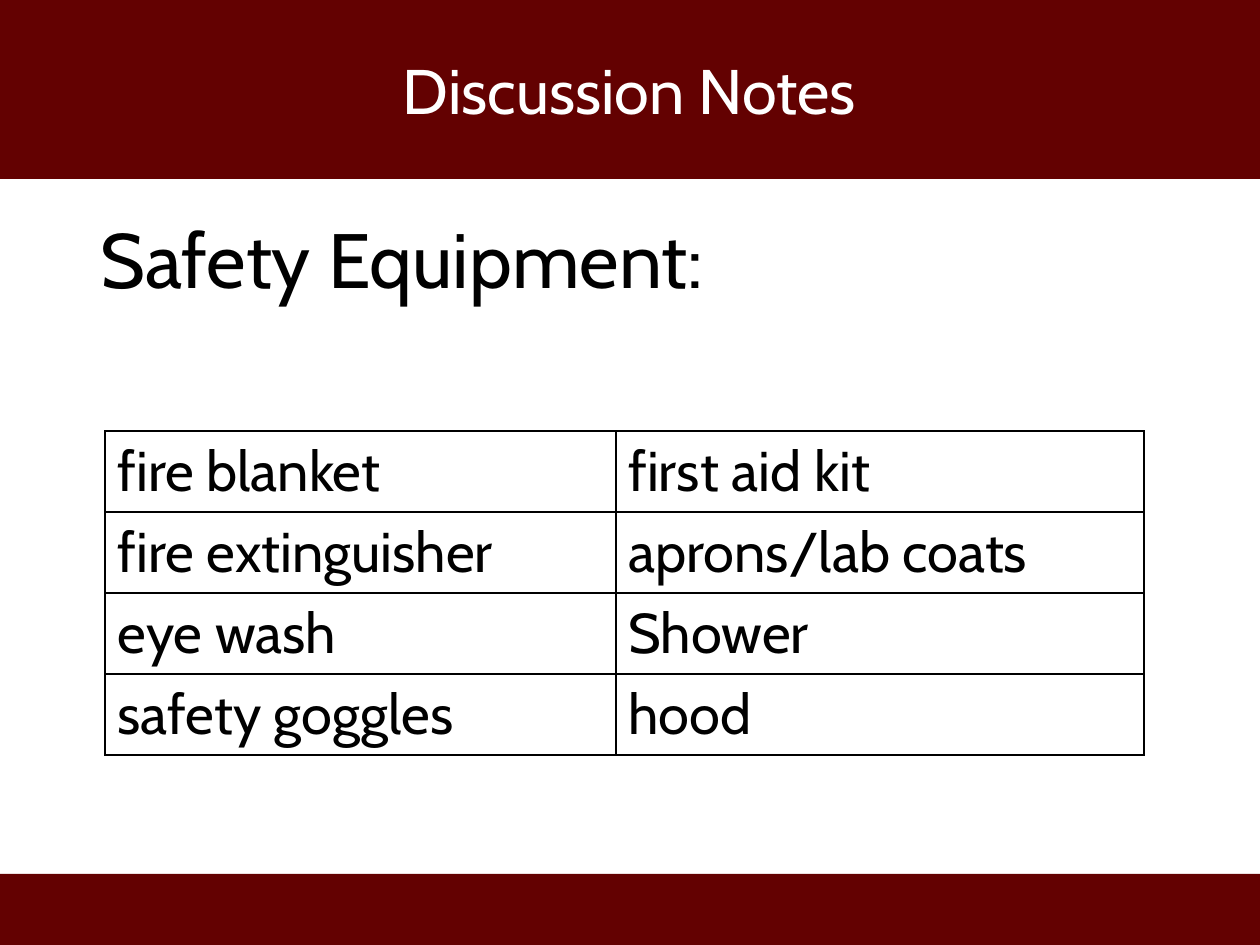
from lxml import etree
from pptx import Presentation
from pptx.dml.color import RGBColor
from pptx.enum.shapes import MSO_SHAPE
from pptx.enum.text import MSO_ANCHOR, PP_ALIGN
from pptx.oxml.ns import qn
from pptx.util import Emu, Pt

PX = 914400 // 126
WIDTH, HEIGHT = 1260, 945
FONT = "Cabin"
COLORS = {"band": "630101", "title": "FFFFFF", "text": "000000", "border": "000000"}
RECTANGLE = MSO_SHAPE.RECTANGLE
TOP, MIDDLE = MSO_ANCHOR.TOP, MSO_ANCHOR.MIDDLE
LEFT, CENTER = PP_ALIGN.LEFT, PP_ALIGN.CENTER

EQUIPMENT = [
    ("fire blanket", "first aid kit"),
    ("fire extinguisher", "aprons/lab coats"),
    ("eye wash", "Shower"),
    ("safety goggles", "hood"),
]
COLUMN_WIDTHS = (511, 528)
ROW_HEIGHT = 81


def px(*lengths):
    return [Emu(length * PX) for length in lengths]


def rgb(name):
    return RGBColor.from_string(COLORS[name])


def write(frame, text, size, color, align=LEFT):
    paragraph = frame.paragraphs[0]
    paragraph.text = text
    paragraph.alignment = align
    paragraph.font.name = FONT
    paragraph.font.size = Pt(size)
    paragraph.font.color.rgb = rgb(color)


def add_band(slide, top, height):
    band = slide.shapes.add_shape(RECTANGLE, *px(0, top, WIDTH, height))
    band.shadow.inherit = False
    band.fill.solid()
    band.fill.fore_color.rgb = rgb("band")
    band.line.fill.background()


def add_text(slide, box, text, size, color, align=LEFT, anchor=TOP):
    frame = slide.shapes.add_textbox(*px(*box)).text_frame
    frame.word_wrap = True
    frame.vertical_anchor = anchor
    write(frame, text, size, color, align)


def add_borders(cell):
    properties = cell._tc.get_or_add_tcPr()
    for index, side in enumerate(("a:lnL", "a:lnR", "a:lnT", "a:lnB")):
        line = etree.Element(qn(side), w=str(Pt(1)))
        fill = etree.SubElement(line, qn("a:solidFill"))
        etree.SubElement(fill, qn("a:srgbClr"), val=COLORS["border"])
        properties.insert(index, line)


def add_equipment_table(slide, left, top):
    box = px(left, top, sum(COLUMN_WIDTHS), ROW_HEIGHT * len(EQUIPMENT))
    table = slide.shapes.add_table(len(EQUIPMENT), len(COLUMN_WIDTHS), *box).table
    table.first_row = table.horz_banding = False
    for column, width in zip(table.columns, px(*COLUMN_WIDTHS)):
        column.width = width
    for row, items in zip(table.rows, EQUIPMENT):
        for cell, item in zip(row.cells, items):
            cell.fill.background()
            add_borders(cell)
            write(cell.text_frame, item, 32, "text")


def main():
    presentation = Presentation()
    presentation.slide_width, presentation.slide_height = px(WIDTH, HEIGHT)
    slide = presentation.slides.add_slide(presentation.slide_layouts[6])

    # Footer and header bands
    add_band(slide, 874, HEIGHT - 874)
    add_band(slide, 0, 179)

    # Title and heading
    add_text(slide, (28, 9, 1203, 161), "Discussion Notes", 36, "title", CENTER, MIDDLE)
    add_text(slide, (88, 205, 1084, 67), "Safety Equipment:", 44, "text")

    # Equipment list
    add_equipment_table(slide, 105, 431)

    presentation.save("out.pptx")


if __name__ == "__main__":
    main()
